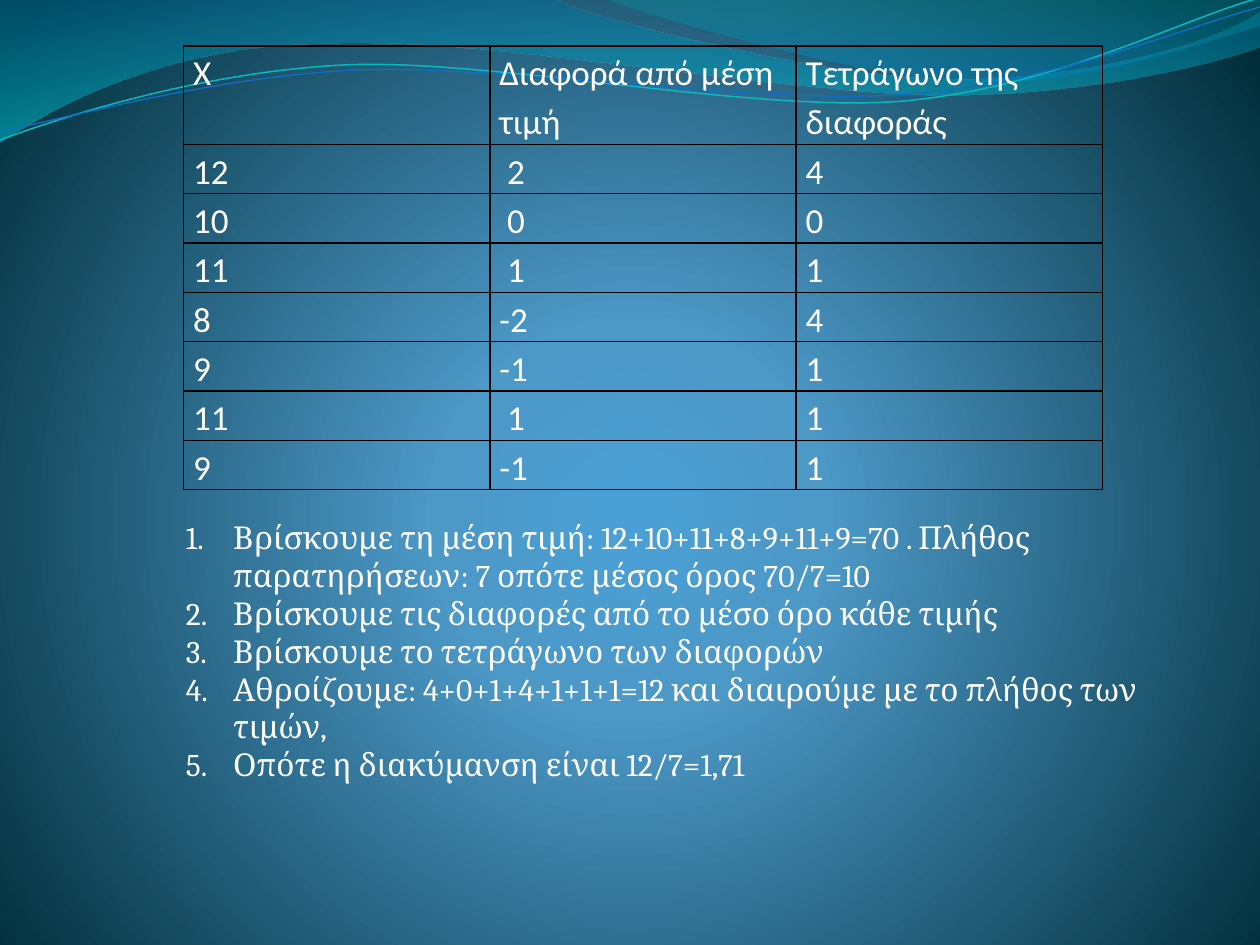
import math
from lxml import etree
from pptx import Presentation
from pptx import util as u
from pptx.dml.color import RGBColor
from pptx.enum import text
from pptx.oxml import ns

Pt = u.Pt
rgb = RGBColor.from_string


def sub(parent, tag, **attrs):
    return etree.SubElement(parent, ns.qn(tag), attrs)


def gradient(fill, root, stops):
    fill.gradient()
    grad = root.find(".//" + ns.qn("a:gradFill"))
    for child in list(grad):
        grad.remove(child)
    lst = sub(grad, "a:gsLst")
    for pos, color, *alpha in stops:
        gs = sub(lst, "a:gs", pos=str(pos * 1000))
        clr = sub(gs, "a:srgbClr", val=color)
        for value in alpha:
            sub(clr, "a:alpha", val=str(value * 1000))
    return grad


prs = Presentation()
prs.slide_width, prs.slide_height = Pt(720), Pt(540)
s = prs.slides.add_slide(prs.slide_layouts[6])

grad = gradient(s.background.fill, s._element,
                [(0, "4AA0D6"), (25, "4C98C7"), (100, "002C38")])
shade = sub(grad, "a:path", path="circle")
sub(shade, "a:fillToRect", l="10000", t="110000", r="10000", b="100000")

waves = [
    {"segs": [(-0.5, -0.2), (317, -0.5), (343, 12, 478, 45, 546, 45),
              (614, 45, 690, 27, 720, 6.5), (720.6, 26),
              (708, 32, 626, 55, 537, 54), (447, 54, 275, 20, 185, 24.5),
              (93, 26, 33, 60, -0.7, 81.5)],
     "stops": [(0, "0074A1", 45), (100, "00C6CF", 55)]},
    {"segs": [(345, -0.6), (366, 8, 491, 45, 554, 47),
              (616, 50, 692, 23, 720, 15), (720, 0)],
     "stops": [(0, "00A1A9", 30), (80, "008BBF", 45)]},
    {"segs": [(0, 80), (35, 67, 114, 41, 199, 37),
              (284, 34, 427, 64, 513, 58), (600, 51, 675, 11, 719, -1)],
     "line": ("0AB8BF", 0.85), "center": (359.3, 41.4)},
    {"segs": [(0, 75), (34, 69, 118, 44, 204, 40),
              (290, 37, 430, 60, 516, 54), (602, 48, 678, 15, 720, 4)],
     "line": ("0F6FC6", 0.75), "center": (359.6, 42.5)},
]
tilt = 2.7
cos, sin = math.cos(math.radians(tilt)), math.sin(math.radians(tilt))
for wave in waves:
    pts = [seg[i:i + 2] for seg in wave["segs"] for i in range(0, len(seg), 2)]
    if "center" in wave:
        cx, cy = wave["center"]
        pts = [(cx + (x - cx) * cos - (y - cy) * sin,
                cy + (x - cx) * sin + (y - cy) * cos) for x, y in pts]
    pts = [(Pt(x), Pt(y)) for x, y in pts]
    fb = s.shapes.build_freeform(*pts[0])
    fb.add_line_segments(pts[1:], close="stops" in wave)
    sp = fb.convert_to_shape()
    sp.shadow.inherit = False
    lines = iter(sp._element.findall(".//" + ns.qn("a:lnTo")))
    for seg in wave["segs"][1:]:
        first = next(lines)
        if len(seg) == 6:
            first.tag = ns.qn("a:cubicBezTo")
            for other in (next(lines), next(lines)):
                first.append(other[0])
                other.getparent().remove(other)
    if "stops" in wave:
        grad = gradient(sp.fill, sp._element, wave["stops"])
        sub(grad, "a:lin", ang="5400000", scaled="0")
        sp.line.fill.background()
    else:
        color, width = wave["line"]
        sp.rotation = 360 - tilt
        sp.fill.background()
        sp.line.color.rgb = rgb(color)
        sp.line.width = Pt(width)

rows = [
    ("Χ", "Διαφορά από μέση τιμή", "Τετράγωνο της διαφοράς"),
    ("12", " 2", "4"),
    ("10", " 0", "0"),
    ("11", " 1", "1"),
    ("8", "-2", "4"),
    ("9", "-1", "1"),
    ("11", " 1", "1"),
    ("9", "-1", "1"),
]
cell_format = {"margin_left": Pt(5.4), "margin_right": Pt(5.4), "margin_top": 0, "margin_bottom": 0}
cell_font = {"size": Pt(20), "name": "Calibri", "bold": False}
frame = s.shapes.add_table(len(rows), 3, Pt(105), Pt(26.2), Pt(524.9), Pt(248.4))
table = frame.table
table.first_row = table.horz_banding = False
for row, values in zip(table.rows, rows):
    row.height = Pt(21.6)
    for cell, value in zip(row.cells, values):
        for name, val in cell_format.items():
            setattr(cell, name, val)
        tcPr = cell._tc.get_or_add_tcPr()
        for side in "LRTB":
            ln = sub(tcPr, "a:ln" + side, w=str(Pt(1)))
            sub(sub(ln, "a:solidFill"), "a:srgbClr", val="000000")
        cell.fill.background()
        p = cell.text_frame.paragraphs[0]
        p.line_spacing = 1.15
        r = p.add_run()
        r.text = value
        for name, val in cell_font.items():
            setattr(r.font, name, val)
        r.font.color.rgb = rgb("FFFFFF")
frame.height = Pt(248.4)

solution = [
    "Βρίσκουμε τη μέση τιμή: 12+10+11+8+9+11+9=70 . Πλήθος παρατηρήσεων: 7 οπότε μέσος όρος 70/7=10",
    "Βρίσκουμε τις διαφορές από το μέσο όρο κάθε τιμής",
    "Βρίσκουμε το τετράγωνο των διαφορών",
    "Αθροίζουμε: 4+0+1+4+1+1+1=12 και διαιρούμε με το πλήθος των τιμών,",
    "Οπότε η διακύμανση είναι 12/7=1,71",
]
step_font = {"size": Pt(18), "name": "Cambria"}
tf = s.shapes.add_textbox(Pt(99.2), Pt(292.7), Pt(607), Pt(138)).text_frame
tf.word_wrap = True
tf.auto_size = text.MSO_AUTO_SIZE.SHAPE_TO_FIT_TEXT
for i, line in enumerate(solution):
    p = tf.add_paragraph() if i else tf.paragraphs[0]
    pPr = p._p.get_or_add_pPr()
    pPr.set("marL", str(Pt(27)))
    pPr.set("indent", str(-Pt(27)))
    sub(pPr, "a:buFont", typeface="Calibri")
    sub(pPr, "a:buAutoNum", type="arabicPeriod")
    r = p.add_run()
    r.text = line
    for name, val in step_font.items():
        setattr(r.font, name, val)
    r.font.color.rgb = rgb("FFFFFF")

prs.save("out.pptx")
